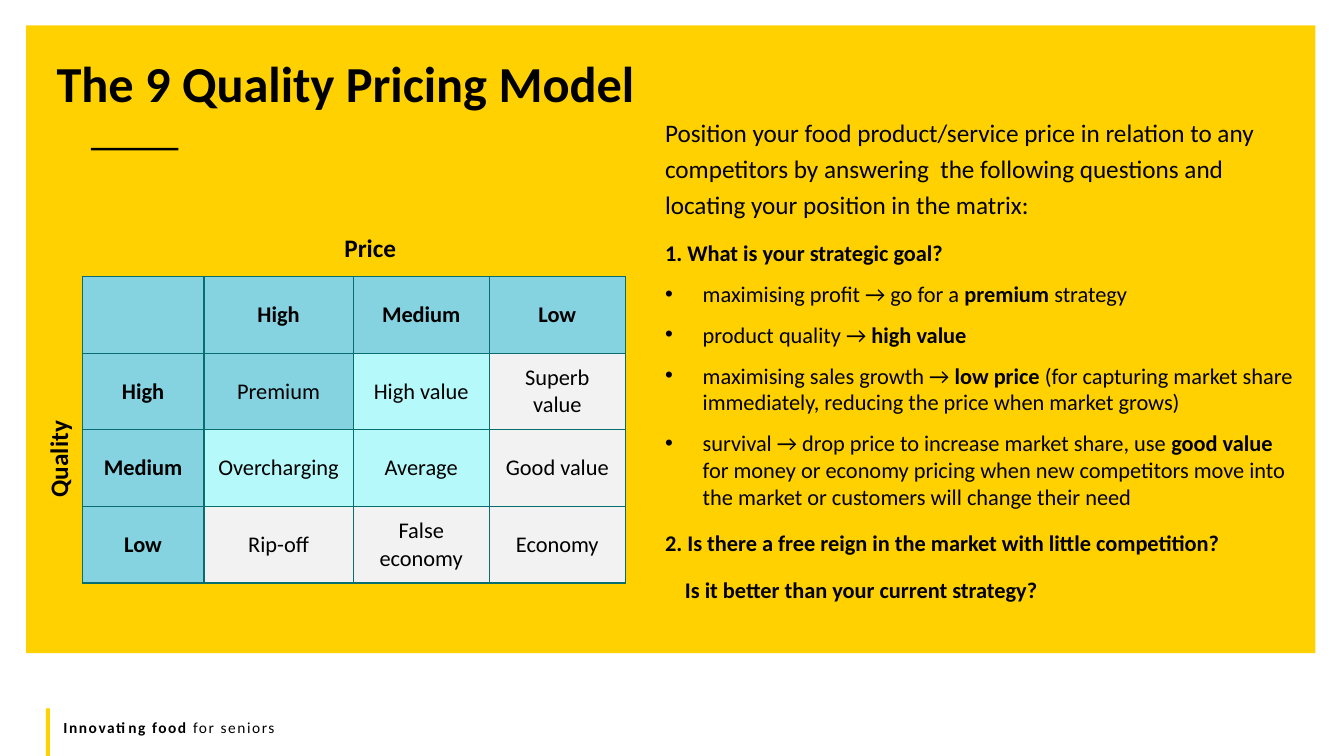
from typing import NamedTuple

from lxml import etree
from pptx import Presentation
from pptx.dml.color import RGBColor
from pptx.enum.shapes import MSO_SHAPE
from pptx.enum.text import MSO_ANCHOR, PP_ALIGN
from pptx.oxml.ns import qn
from pptx.util import Cm, Pt

RECT = MSO_SHAPE.RECTANGLE
TOP, MIDDLE = MSO_ANCHOR.TOP, MSO_ANCHOR.MIDDLE
LEFT, CENTER = PP_ALIGN.LEFT, PP_ALIGN.CENTER

FONT = "Calibri"
BLACK = RGBColor(0x00, 0x00, 0x00)
YELLOW = RGBColor(0xFF, 0xD1, 0x00)
TEAL = "086D6E"
BLUE = RGBColor(0x85, 0xD2, 0xE1)
AQUA = RGBColor(0xB6, 0xF9, 0xFA)
GREY = RGBColor(0xF2, 0xF2, 0xF2)


class Box(NamedTuple):
    left: float
    top: float
    width: float
    height: float

    def place(self) -> tuple:
        return tuple(Cm(side) for side in self)


class Bar(NamedTuple):
    box: Box
    color: RGBColor


class Run(NamedTuple):
    text: str
    bold: bool = False


class Para(NamedTuple):
    runs: list[Run]
    size: int = 16
    bullet: bool = False
    indent: float = 0


class Label(NamedTuple):
    text: str
    box: Box
    turn: int = 0


BARS = [
    Bar(Box(0.66, 0.64, 32.49, 15.82), YELLOW),
    Bar(Box(2.29, 3.73, 2.21, 0.06), BLACK),
    Bar(Box(1.16, 17.85, 0.1, 1.2), YELLOW),
]
LABELS = [
    Label("Price", Box(8.43, 5.74, 1.83, 1.02)),
    Label("Quality", Box(0.25, 11.05, 2.44, 1.02), 270),
]
GUIDE = [
    Para([Run("Position your food product/service price in relation to any "
              "competitors by answering  the following questions and "
              "locating your position in the matrix:")], size=18),
    Para([Run("1. What is your strategic goal?", True)]),
    Para([Run("maximising profit → go for a "), Run("premium", True),
          Run(" strategy")], bullet=True),
    Para([Run("product quality → "), Run("high value", True)], bullet=True),
    Para([Run("maximising sales growth → "), Run("low price ", True),
          Run("(for capturing market share immediately, reducing the price "
              "when market grows)")], bullet=True),
    Para([Run("survival → drop price to increase market share, use "),
          Run("good value", True),
          Run(" for money or economy pricing when new competitors move into "
              "the market or customers will change their need")], bullet=True),
    Para([Run("2. Is there a free reign in the market with little "
              "competition?", True)]),
    Para([Run("Is it better than your current strategy?", True)], indent=0.5),
]
MATRIX = [
    ["", "High", "Medium", "Low"],
    ["High", "Premium", "High value", "Superb value"],
    ["Medium", "Overcharging", "Average", "Good value"],
    ["Low", "Rip-off", "False economy", "Economy"],
]
TINTS = [
    [BLUE, BLUE, BLUE, BLUE],
    [BLUE, BLUE, AQUA, GREY],
    [BLUE, AQUA, AQUA, GREY],
    [BLUE, GREY, GREY, GREY],
]
COLS = [3.07, 3.76, 3.43, 3.43]
ROW = 1.93


def add_run(para, run: Run, size: float, track: int = 0) -> None:
    part = para.add_run()
    part.text = run.text
    font = part.font
    font.name, font.size, font.bold = FONT, Pt(size), run.bold
    font.color.rgb = BLACK
    if track:
        font._element.set("spc", str(track))


def add_bar(slide, bar: Bar) -> None:
    shape = slide.shapes.add_shape(RECT, *bar.box.place())
    shape.shadow.inherit = False
    shape.fill.solid()
    shape.fill.fore_color.rgb = bar.color
    shape.line.fill.background()


def add_text(slide, box: Box, wrap: bool = True):
    shape = slide.shapes.add_textbox(*box.place())
    shape.text_frame.word_wrap = wrap
    return shape


def add_label(slide, label: Label) -> None:
    shape = add_text(slide, label.box, wrap=False)
    shape.rotation = label.turn
    add_run(shape.text_frame.paragraphs[0], Run(label.text, True), 18)


def set_title(slide) -> None:
    title = slide.shapes.title
    title.left, title.top, title.width, title.height = Box(
        1.17, 1.4, 30.02, 1.63).place()
    frame = title.text_frame
    frame.vertical_anchor, frame.word_wrap = MIDDLE, True
    para = frame.paragraphs[0]
    para.alignment, para.line_spacing = LEFT, 0.8
    add_run(para, Run("The 9 Quality Pricing Model", True), 36)


def set_indent(para, item: Para) -> None:
    props = para._p.get_or_add_pPr()
    if item.bullet:
        props.set("marL", str(Cm(0.95)))
        props.set("indent", str(Cm(-0.95)))
        etree.SubElement(props, qn("a:buFont"), typeface="Arial")
        etree.SubElement(props, qn("a:buChar"), char="•")
    elif item.indent:
        props.set("marL", str(Cm(item.indent)))


def add_guide(slide) -> None:
    frame = add_text(slide, Box(16.51, 2.67, 16.38, 15.77)).text_frame
    frame.vertical_anchor = TOP
    for pos, item in enumerate(GUIDE):
        para = frame.add_paragraph() if pos else frame.paragraphs[0]
        set_indent(para, item)
        para.space_before = Pt(10 if pos else 0)
        para.line_spacing = 1.0 if item.bullet else 1.2
        for run in item.runs:
            add_run(para, run, item.size)


def add_edges(cell) -> None:
    props = cell._tc.get_or_add_tcPr()
    for side in ("lnL", "lnR", "lnT", "lnB"):
        line = etree.SubElement(props, qn(f"a:{side}"), w=str(Pt(1)))
        fill = etree.SubElement(line, qn("a:solidFill"))
        etree.SubElement(fill, qn("a:srgbClr"), val=TEAL)


def add_matrix(slide) -> None:
    size = len(MATRIX)
    box = Box(2.07, 6.97, sum(COLS), size * ROW)
    table = slide.shapes.add_table(size, len(COLS), *box.place()).table
    for col, width in zip(table.columns, COLS):
        col.width = Cm(width)
    for r, words in enumerate(MATRIX):
        table.rows[r].height = Cm(ROW)
        for c, word in enumerate(words):
            cell = table.cell(r, c)
            add_edges(cell)
            cell.fill.solid()
            cell.fill.fore_color.rgb = TINTS[r][c]
            cell.vertical_anchor = MIDDLE
            if word:
                para = cell.text_frame.paragraphs[0]
                para.alignment = CENTER
                add_run(para, Run(word, r == 0 or c == 0), 16)


def add_footer(slide) -> None:
    frame = add_text(slide, Box(1.35, 17.96, 30.48, 0.74)).text_frame
    for run in (Run("Innovating food ", True), Run("for seniors")):
        add_run(frame.paragraphs[0], run, 11, track=110)


def main() -> None:
    deck = Presentation()
    deck.slide_width, deck.slide_height = Cm(33.87), Cm(19.05)
    slide = deck.slides.add_slide(deck.slide_layouts[5])
    for bar in BARS:
        add_bar(slide, bar)
    add_footer(slide)
    add_guide(slide)
    set_title(slide)
    add_matrix(slide)
    for label in LABELS:
        add_label(slide, label)
    # The title placeholder comes first in the tree; lift it above the panel.
    tree = slide.shapes._spTree
    tree.append(slide.shapes.title._element)
    deck.save("out.pptx")


if __name__ == "__main__":
    main()
